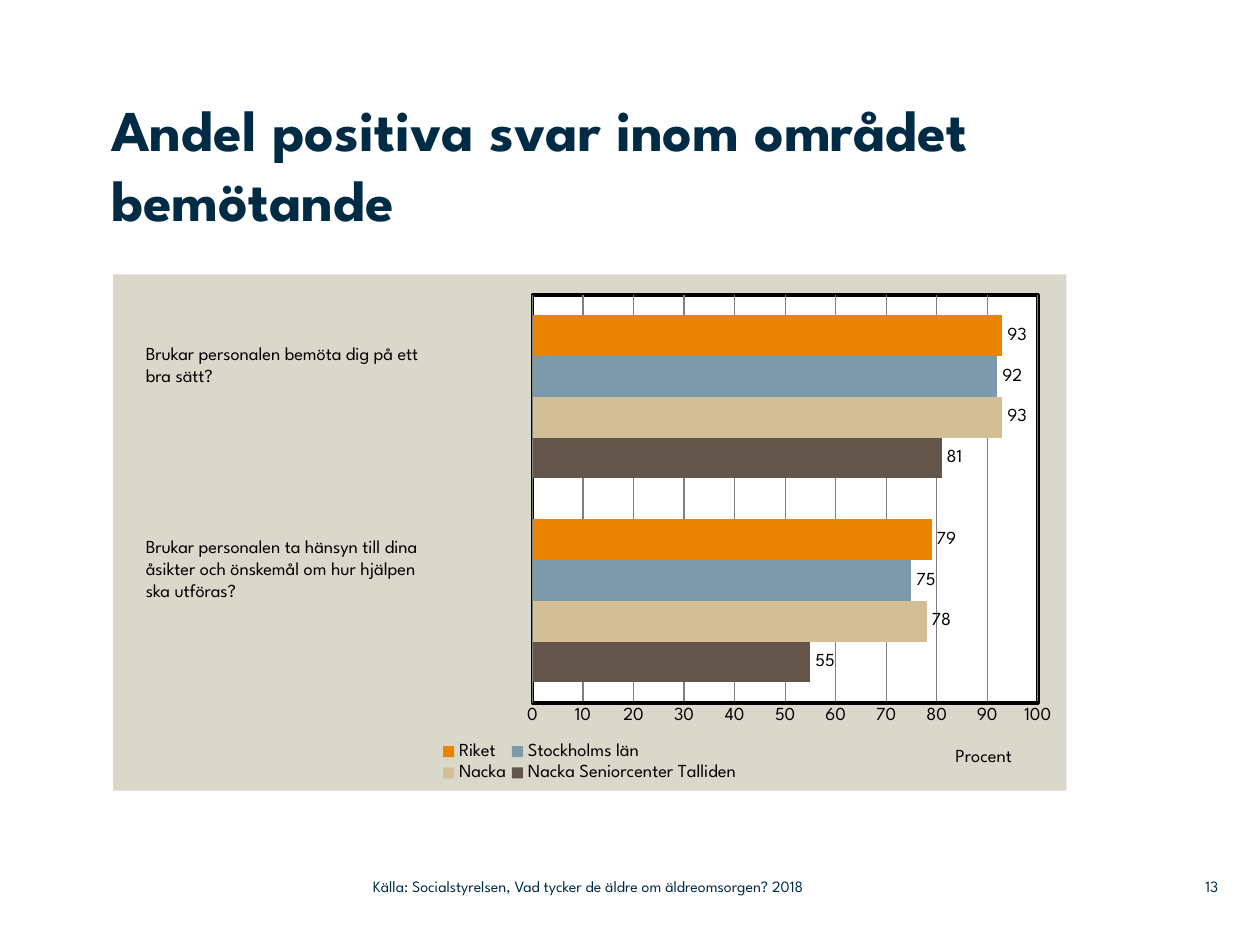
from pptx import Presentation
from pptx.chart.data import CategoryChartData
from pptx.dml.color import RGBColor
from pptx.enum import chart as ch, text as tx
from pptx.oxml import parse_xml
from pptx.oxml.ns import nsdecls, qn
from pptx.util import Cm, Pt

FONT = "League Spartan"
NAVY, BLACK, GRID = "002B45", "000000", "808080"
TITLE = "Andel positiva svar inom området bemötande"
SERIES = [
    ("Nacka Seniorcenter Talliden", (55, 81), "635549"),
    ("Nacka", (78, 93), "D3BF96"),
    ("Stockholms län", (75, 92), "7D9AAA"),
    ("Riket", (79, 93), "E98300"),
]
# lines, box in cm, size, colour, align
NOTES = [
    (["Brukar personalen bemöta dig på ett", "bra sätt?"],
     (2.69, 6.78, 7.54, 1.14), 10.5, BLACK, "LEFT"),
    (["Brukar personalen ta hänsyn till dina",
      "åsikter och önskemål om hur hjälpen", "ska utföras?"],
     (2.69, 10.67, 7.59, 1.6), 10.5, BLACK, "LEFT"),
]
FOOTER = [
    (["13"], (23.37, 17.5, 1.19, 0.74), 9, NAVY, "RIGHT"),
    (["Källa: Socialstyrelsen, Vad tycker de äldre om äldreomsorgen? 2018"],
     (7.52, 17.5, 11.25, 0.74), 9, NAVY, "LEFT"),
]


def rgb(code):
    return RGBColor.from_string(code)


def style(font, size, color, bold=False):
    font.name, font.size, font.bold = FONT, Pt(size), bold
    font.color.rgb = rgb(color)


def trim(frame):
    frame.margin_left = frame.margin_right = 0
    frame.margin_top = frame.margin_bottom = 0


def add_text(slide, lines, box, size, color, align):
    frame = slide.shapes.add_textbox(*map(Cm, box)).text_frame
    frame.word_wrap = True
    for i, line in enumerate(lines):
        para = frame.add_paragraph() if i else frame.paragraphs[0]
        para.alignment = getattr(tx.PP_ALIGN, align)
        run = para.add_run()
        run.text = line
        style(run.font, size, color)
    return frame


def place(node, index, x, y, w=None, h=None, inner=False):
    """Give a chart part a fixed place, in fractions of the chart."""
    for old in node.findall(qn("c:layout")):
        node.remove(old)
    parts = [("layoutTarget", "inner")] if inner else []
    parts += [("xMode", "edge"), ("yMode", "edge"), ("x", x), ("y", y)]
    if w:
        parts += [("w", w), ("h", h)]
    body = "".join(f'<c:{k} val="{v}"/>' for k, v in parts)
    node.insert(index, parse_xml(
        f'<c:layout {nsdecls("c")}><c:manualLayout>{body}'
        '</c:manualLayout></c:layout>'))


def backdrop(fill, line=None):
    edge = (f'<a:ln w="{Pt(2)}"><a:solidFill><a:srgbClr val="{line}"/>'
            '</a:solidFill></a:ln>' if line else '<a:ln><a:noFill/></a:ln>')
    return parse_xml(
        f'<c:spPr {nsdecls("c", "a")}><a:solidFill><a:srgbClr val="{fill}"/>'
        f'</a:solidFill>{edge}</c:spPr>')


def add_bars(slide):
    data = CategoryChartData()
    data.categories = ["1", "2"]
    for name, vals, _ in SERIES:
        data.add_series(name, vals)
    box = map(Cm, (2.28, 5.53, 19.22, 10.41))
    chart = slide.shapes.add_chart(
        ch.XL_CHART_TYPE.BAR_CLUSTERED, *box, data).chart
    style(chart.font, 10.5, BLACK)
    chart.has_title = False

    plot = chart.plots[0]
    plot.gap_width, plot.overlap, plot.vary_by_categories = 100, 0, False
    for bar, (_, _, color) in zip(plot.series, SERIES):
        bar.format.fill.solid()
        bar.format.fill.fore_color.rgb = rgb(color)
        labels = bar.data_labels
        labels.show_value = True
        labels.position = ch.XL_LABEL_POSITION.OUTSIDE_END
        style(labels.font, 10.5, BLACK)

    chart.category_axis.visible = False
    axis = chart.value_axis
    axis.minimum_scale, axis.maximum_scale, axis.major_unit = 0, 100, 10
    axis.major_tick_mark = axis.minor_tick_mark = ch.XL_TICK_MARK.NONE
    axis.has_major_gridlines = True
    for line, color, width in ((axis.format.line, BLACK, 2),
                               (axis.major_gridlines.format.line, GRID, 0.75)):
        line.color.rgb, line.width = rgb(color), Pt(width)
    run = axis.axis_title.text_frame.paragraphs[0].add_run()
    run.text = "Procent"
    style(run.font, 10.5, BLACK)

    chart.has_legend = True
    legend = chart.legend
    legend.position = ch.XL_LEGEND_POSITION.BOTTOM
    legend.include_in_layout = False
    style(legend.font, 10.5, BLACK)

    root = chart.element.find(qn("c:chart"))
    area = root.find(qn("c:plotArea"))
    place(area, 0, 0.44, 0.04, 0.53, 0.79, inner=True)
    place(root.find(qn("c:legend")), 1, 0.34, 0.9, 0.32, 0.09)
    place(area.find(qn("c:valAx")).find(qn("c:title")), 1, 0.88, 0.91)
    area.append(backdrop("FFFFFF", BLACK))
    root.addnext(backdrop("DAD7CB"))


def main():
    deck = Presentation()
    deck.slide_width, deck.slide_height = Cm(25.4), Cm(19.05)
    slide = deck.slides.add_slide(deck.slide_layouts[5])

    title = slide.shapes.title
    title.left, title.top, title.width, title.height = map(
        Cm, (2.24, 1.9, 19.3, 3.6))
    frame = title.text_frame
    trim(frame)
    frame.auto_size = tx.MSO_AUTO_SIZE.NONE
    frame.vertical_anchor = tx.MSO_ANCHOR.TOP
    para = frame.paragraphs[0]
    para.alignment = tx.PP_ALIGN.LEFT
    run = para.add_run()
    run.text = TITLE
    style(run.font, 33, NAVY, True)

    add_bars(slide)
    for note in NOTES:
        add_text(slide, *note).auto_size = tx.MSO_AUTO_SIZE.SHAPE_TO_FIT_TEXT
    for note in FOOTER:
        frame = add_text(slide, *note)
        trim(frame)
        frame.vertical_anchor = tx.MSO_ANCHOR.MIDDLE
    deck.save("out.pptx")


if __name__ == "__main__":
    main()
